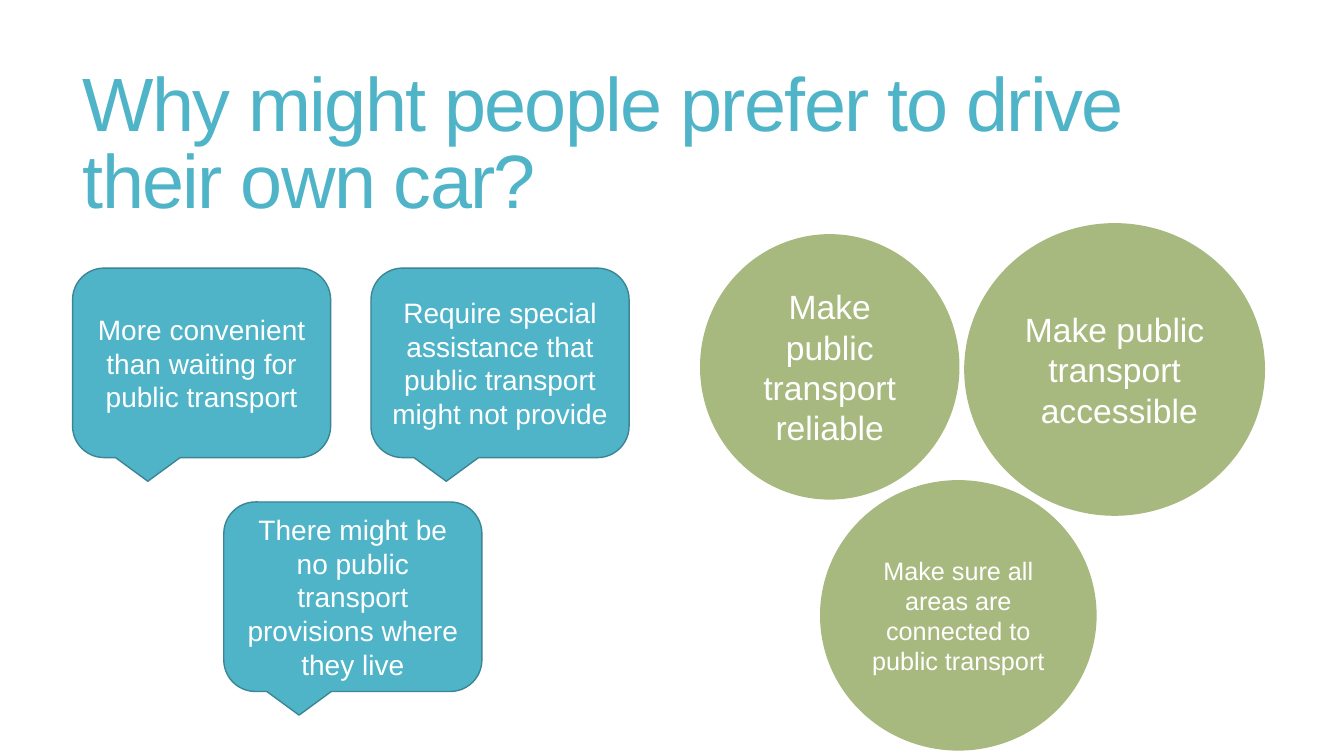
"""Build the slide on why people might prefer to drive their own car."""
from dataclasses import dataclass

from pptx import Presentation
from pptx import util as u
from pptx.dml.color import RGBColor
from pptx.enum import shapes, text

EMU_PER_PX = u.Inches(1) // 100
FONT = "Arial"
TEAL, DARK_TEAL, GREEN, WHITE = "50B4C8", "3B8594", "A8B97F", "FFFFFF"


@dataclass(frozen=True)
class Bubble:
    left: int
    top: int
    width: int
    height: int
    wording: str
    font_size: int


@dataclass(frozen=True)
class Style:
    preset: shapes.MSO_SHAPE
    fill: str
    line: str


CALLOUT = Style(shapes.MSO_SHAPE.ROUNDED_RECTANGULAR_CALLOUT, TEAL, DARK_TEAL)
CIRCLE = Style(shapes.MSO_SHAPE.OVAL, GREEN, GREEN)

REASONS = [
    Bubble(left, top, 256, 188, wording, 20)
    for left, top, wording in (
        (72, 266, "More convenient than waiting for public transport"),
        (368, 266, "Require special assistance that public transport might not provide"),
        (222, 498, "There might be no public transport provisions where they live"),
    )
]
SOLUTIONS = [
    Bubble(695, 233, 256, 262, "Make public transport reliable", 24),
    Bubble(814, 477, 273, 267, "Make sure all areas are connected to public transport", 18),
    Bubble(957, 222, 297, 289, "Make public transport\n accessible", 24),
]


def px(length: int) -> int:
    return u.Emu(length * EMU_PER_PX)


def color(hex_code: str) -> RGBColor:
    return RGBColor.from_string(hex_code)


def set_font(paragraph, size: int, hex_code: str) -> None:
    paragraph.font.name = FONT
    paragraph.font.size = u.Pt(size)
    paragraph.font.color.rgb = color(hex_code)


def format_title(title, wording: str) -> None:
    title.left, title.top, title.width, title.height = map(px, (72, 55, 1178, 181))
    frame = title.text_frame
    frame.text = wording
    frame.word_wrap = True
    frame.auto_size = text.MSO_AUTO_SIZE.NONE
    frame.vertical_anchor = text.MSO_ANCHOR.MIDDLE
    paragraph = frame.paragraphs[0]
    paragraph.alignment = text.PP_ALIGN.LEFT
    paragraph.line_spacing = 0.85
    set_font(paragraph, 54, TEAL)
    paragraph.runs[0].font._element.set("spc", "-120")


def draw_bubble(slide, bubble: Bubble, style: Style) -> None:
    shape = slide.shapes.add_shape(
        style.preset, px(bubble.left), px(bubble.top), px(bubble.width), px(bubble.height)
    )
    shape.shadow.inherit = False
    shape.fill.solid()
    shape.fill.fore_color.rgb = color(style.fill)
    shape.line.color.rgb = color(style.line)
    shape.line.width = u.Pt(1)
    frame = shape.text_frame
    frame.text = bubble.wording
    frame.word_wrap = True
    frame.vertical_anchor = text.MSO_ANCHOR.MIDDLE
    for paragraph in frame.paragraphs:
        paragraph.alignment = text.PP_ALIGN.CENTER
        set_font(paragraph, bubble.font_size, WHITE)


def main() -> None:
    presentation = Presentation()
    presentation.slide_width, presentation.slide_height = px(1333), px(750)
    slide = presentation.slides.add_slide(presentation.slide_layouts.get_by_name("Title Only"))
    format_title(slide.shapes.title, "Why might people prefer to drive their own car?")
    for bubbles, style in ((REASONS, CALLOUT), (SOLUTIONS, CIRCLE)):
        for bubble in bubbles:
            draw_bubble(slide, bubble, style)
    presentation.save("out.pptx")


if __name__ == "__main__":
    main()
